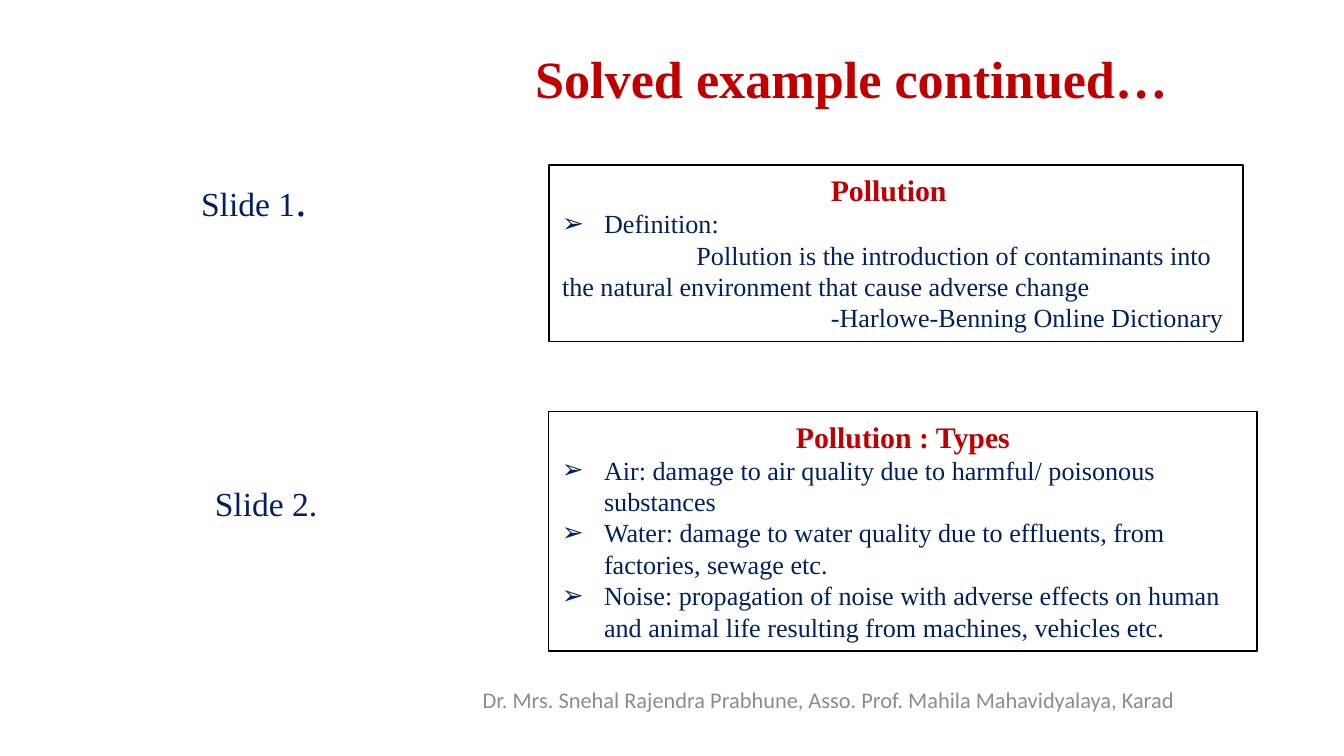
from lxml import etree
from pptx import Presentation
from pptx.dml.color import RGBColor
from pptx.enum.shapes import MSO_SHAPE
from pptx.enum.text import MSO_ANCHOR, PP_ALIGN
from pptx.oxml.ns import qn
from pptx.util import Pt

PX = 9525  # EMU; 96 px to the inch
RED = RGBColor(0xC0, 0x00, 0x00)
NAVY = RGBColor(0x00, 0x20, 0x60)
GREY = RGBColor(0x8C, 0x8C, 0x8C)
BLACK = RGBColor(0x00, 0x00, 0x00)
SERIF = "Times New Roman"
SANS = "Calibri"
RECT = MSO_SHAPE.RECTANGLE
LEFT, CENTER = PP_ALIGN.LEFT, PP_ALIGN.CENTER
TOP, MIDDLE = MSO_ANCHOR.TOP, MSO_ANCHOR.MIDDLE

TAB = 96
HEAD = dict(size=16, color=RED, bold=True)
ITEM = dict(left=30, first=-30, bullet="➢")
TYPES = [
    "Air: damage to air quality due to harmful/ poisonous substances",
    "Water: damage to water quality due to effluents, from factories, sewage etc.",
    "Noise: propagation of noise with adverse effects on human and animal life "
    "resulting from machines, vehicles etc.",
]


def emu(box):
    return [n * PX for n in box]


def place(shape, box):
    shape.left, shape.top, shape.width, shape.height = emu(box)


def add_run(para, text, size, color=NAVY, bold=False, font=SERIF):
    run = para.add_run()
    run.text = text
    run.font.name = font
    run.font.size = Pt(size)
    run.font.bold = bold
    run.font.color.rgb = color


def write(frame, text, size=14, align=LEFT, left=0, first=0, bullet=None,
          **form):
    """Fill the empty first paragraph, or add one; return it."""
    para = frame.paragraphs[0]
    if para.runs:
        para = frame.add_paragraph()
    para.alignment = align
    props = para._p.get_or_add_pPr()
    props.set("marL", str(left * PX))
    props.set("indent", str(first * PX))
    if bullet:
        etree.SubElement(props, qn("a:buFont")).set("typeface", "Arial")
        etree.SubElement(props, qn("a:buChar")).set("char", bullet)
    else:
        etree.SubElement(props, qn("a:buNone"))
    add_run(para, text, size, **form)
    return para


def label(slide, box, text, anchor=TOP, **form):
    frame = slide.shapes.add_textbox(*emu(box)).text_frame
    frame.word_wrap = True
    frame.vertical_anchor = anchor
    write(frame, text, **form)


def panel(slide, box, lines):
    """Draw a framed card holding (text, format) lines."""
    card = slide.shapes.add_shape(RECT, *emu(box))
    card.shadow.inherit = False
    card.fill.background()
    card.line.color.rgb = BLACK
    card.line.width = Pt(0.75)
    frame = card.text_frame
    frame.word_wrap = True
    frame.vertical_anchor = TOP
    for text, form in lines:
        write(frame, text, **form)


def title(slide, box):
    shape = slide.shapes.title
    place(shape, box)
    shape.text_frame.vertical_anchor = MIDDLE
    write(shape.text_frame, "Solved example continued…", size=28,
          color=RED, bold=True, align=CENTER)


def body(slide, box):
    shape = slide.placeholders[1]
    place(shape, box)
    para = write(shape.text_frame, " Slide 1", size=18)
    add_run(para, ".", 24)


def main():
    deck = Presentation()
    deck.slide_width, deck.slide_height = emu((960, 540))
    slide = deck.slides.add_slide(deck.slide_layouts[1])
    title(slide, (256, 0, 704, 111))
    body(slide, (128, 118, 248, 88))
    panel(slide, (392, 118, 496, 126), [
        ("Pollution", dict(HEAD, left=2 * TAB)),
        ("Definition:", ITEM),
        ("Pollution is the introduction of contaminants into the natural "
         "environment that cause adverse change", dict(first=TAB)),
        ("-Harlowe-Benning Online Dictionary", dict(left=2 * TAB)),
    ])
    panel(slide, (392, 294, 506, 171),
          [("Pollution : Types", dict(HEAD, align=CENTER))]
          + [(text, ITEM) for text in TYPES])
    label(slide, (144, 340, 104, 38), "Slide 2.", size=18)
    label(slide, (328, 470, 528, 60),
          "Dr. Mrs. Snehal Rajendra Prabhune, Asso. Prof. Mahila Mahavidyalaya, Karad",
          anchor=MIDDLE, size=12, color=GREY, font=SANS, align=CENTER)
    deck.save("out.pptx")


if __name__ == "__main__":
    main()
